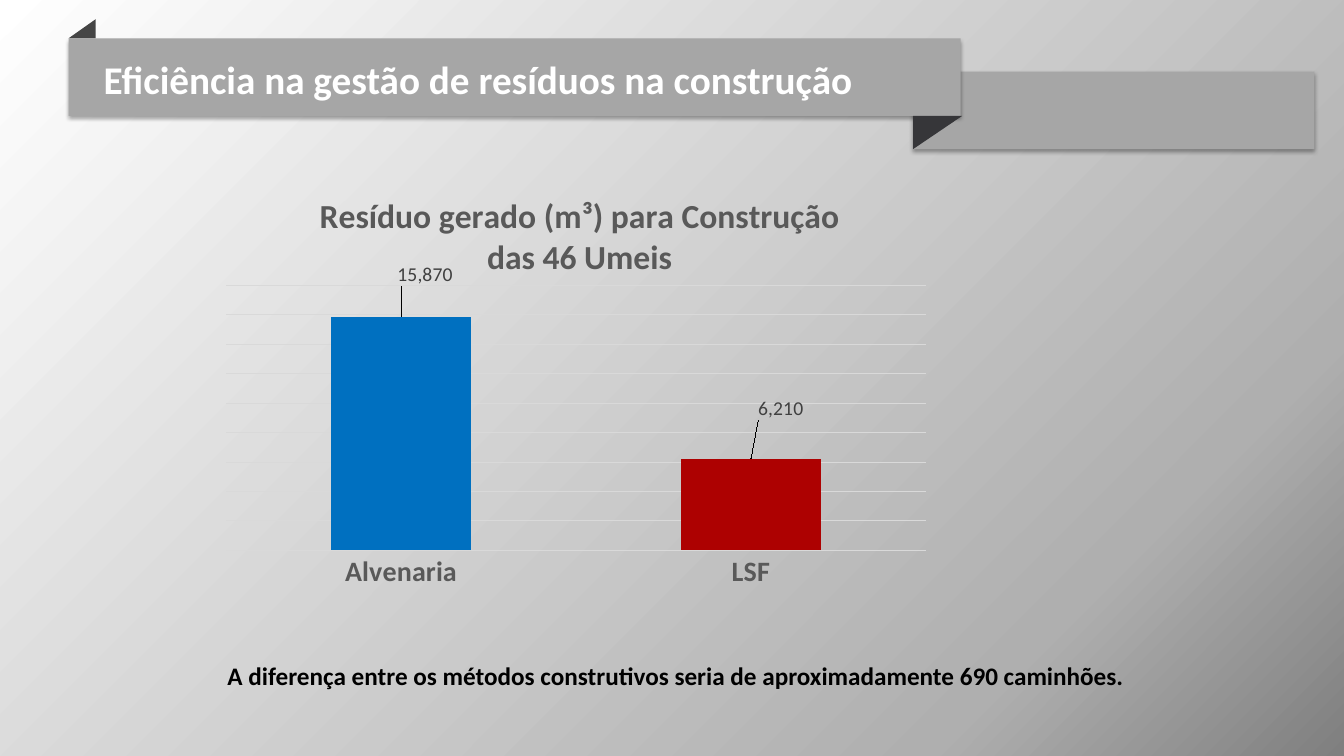
import pptx
import pptx.chart.data
import pptx.dml.color
import pptx.enum.chart
import pptx.enum.shapes
import pptx.enum.text
import pptx.oxml
import pptx.oxml.ns
import pptx.util

Pt = pptx.util.Pt
MSO_SHAPE = pptx.enum.shapes.MSO_SHAPE
ALIGN = pptx.enum.text.PP_ALIGN
ANCHOR = pptx.enum.text.MSO_ANCHOR

COLORS = {
    "white": "FFFFFF", "black": "000000", "ribbon": "A6A6A6",
    "upper fold": "454545", "lower fold": "363639",
    "mid grey": "AFAFAF", "dark grey": "7F7F7F",
    "heading": "595959", "label": "404040", "grid": "D9D9D9",
    "masonry": "0070C0", "steel frame": "AD0101",
}
FONT = "Calibri"


def rgb(name):
    return pptx.dml.color.RGBColor.from_string(COLORS[name])


def element(tag, content="", **attributes):
    """Build one XML element, with its namespace declared."""
    listed = "".join(f' {key}="{value}"' for key, value in attributes.items())
    spaces = pptx.oxml.ns.nsdecls("a", "c")
    return pptx.oxml.parse_xml(f"<{tag} {spaces}{listed}>{content}</{tag}>")


def style_font(font, size, color, bold=False):
    font.name, font.size, font.bold = FONT, Pt(size), bold
    font.color.rgb = rgb(color)


def add_text(slide, text, box, size=18, color="black", align=ALIGN.LEFT,
             anchor=ANCHOR.TOP):
    frame = slide.shapes.add_textbox(*map(Pt, box)).text_frame
    frame.word_wrap = True
    frame.vertical_anchor = anchor
    line = frame.paragraphs[0]
    line.alignment = align
    run = line.add_run()
    run.text = text
    style_font(run.font, size, color, bold=True)


def paint_background(slide):
    fill = slide.background.fill
    fill.gradient()
    fill.gradient_angle = 315
    stop_list = slide.background._cSld.xpath(".//a:gsLst")[0]
    for stop in list(stop_list):
        stop_list.remove(stop)
    for percent, name in ((0, "white"), (80, "mid grey"), (100, "dark grey")):
        color = f'<a:srgbClr val="{COLORS[name]}"/>'
        stop_list.append(element("a:gs", color, pos=percent * 1000))


def add_piece(slide, preset, box, color, flip=None, shadow=False):
    piece = slide.shapes.add_shape(preset, *map(Pt, box))
    piece.fill.solid()
    piece.fill.fore_color.rgb = rgb(color)
    piece.line.fill.background()
    piece.shadow.inherit = False
    if flip:
        piece._element.spPr.find(pptx.oxml.ns.qn("a:xfrm")).set(flip, "1")
    if shadow:
        black = f'<a:srgbClr val="{COLORS["black"]}"><a:alpha val="35000"/></a:srgbClr>'
        piece._element.xpath("./p:spPr/a:effectLst")[0].append(element(
            "a:outerShdw", black, blurRad=Pt(3.1), dist=Pt(1.8),
            dir=90 * 60000, rotWithShape=0))


def add_ribbon(slide, left, top, width, height, heading):
    """Folded title ribbon: tail behind, banner in front, two dark folds."""
    band = 55.4
    tail_left, tail_top = left + 603.3, top + height - band
    banner_top, banner_width = top + 13.7, 637.2
    banner_bottom = banner_top + band
    add_piece(slide, MSO_SHAPE.RECTANGLE,
              (tail_left, tail_top, left + width - tail_left, band),
              "ribbon", shadow=True)
    add_piece(slide, MSO_SHAPE.RIGHT_TRIANGLE,
              (left, top, 19.4, banner_top - top), "upper fold", flip="flipH")
    add_piece(slide, MSO_SHAPE.RECTANGLE,
              (left, banner_top, banner_width, band), "ribbon", shadow=True)
    add_piece(slide, MSO_SHAPE.RIGHT_TRIANGLE,
              (tail_left, banner_bottom, 35, top + height - banner_bottom),
              "lower fold", flip="flipV")
    add_text(slide, heading, (left + 18, banner_top + 10.8, 609, 36),
             size=28, color="white", anchor=ANCHOR.MIDDLE)


def manual_layout(x, y, size=None):
    """Chart layout: an offset, or a fixed inner area when a size is given."""
    parts = []
    if size:
        parts = [("layoutTarget", "inner"), ("xMode", "edge"), ("yMode", "edge")]
    parts += [("x", x), ("y", y)]
    if size:
        parts += zip("wh", size)
    content = "".join(f'<c:{tag} val="{value}"/>' for tag, value in parts)
    return element("c:layout", f"<c:manualLayout>{content}</c:manualLayout>")


def place(owner, layout, index):
    for old in owner.xpath("./c:layout"):
        owner.remove(old)
    owner.insert(index, layout)


def add_waste_chart(slide, left, top, width, height):
    waste = pptx.chart.data.CategoryChartData(number_format="#,##0")
    waste.categories = ["Alvenaria", "LSF"]
    waste.add_series("Series 1", [15870, 6210])
    chart = slide.shapes.add_chart(
        pptx.enum.chart.XL_CHART_TYPE.COLUMN_CLUSTERED,
        Pt(left), Pt(top), Pt(width), Pt(height), waste).chart
    style_font(chart.font, 10, "black")
    chart.has_legend = False

    # Chart title
    chart.has_title = True
    title = chart.chart_title
    title.text_frame.text = "Resíduo gerado (m³) para Construção das 46 Umeis"
    style_font(title.text_frame.paragraphs[0].runs[0].font, 24, "heading", bold=True)
    title_layout = manual_layout(0.14, 0.06)
    for mode in ("yMode", "xMode"):
        title_layout[0].insert(0, element(f"c:{mode}", val="edge"))
    place(title._element, title_layout, 1)
    title.include_in_layout = False
    plot_area = chart.element.xpath(".//c:plotArea")[0]
    place(plot_area, manual_layout(0.02, 0.286, (0.96, 0.606)), 0)

    # Axes
    no_ticks = pptx.enum.chart.XL_TICK_MARK.NONE
    names = chart.category_axis
    names.major_tick_mark = no_ticks
    names.format.line.fill.background()
    style_font(names.tick_labels.font, 20, "heading", bold=True)
    volume = chart.value_axis
    volume.visible = False
    volume.minimum_scale, volume.maximum_scale, volume.major_unit = 0, 18000, 2000
    volume.has_major_gridlines = True
    grid = volume.major_gridlines.format.line
    grid.width = Pt(0.75)
    grid.color.rgb = rgb("grid")

    # Columns and their labels
    plot = chart.plots[0]
    plot.gap_width = 150
    plot.vary_by_categories = False
    columns = plot.series[0]
    labels = columns.data_labels
    labels.show_value = True
    labels.number_format, labels.number_format_is_linked = "#,##0", False
    style_font(labels.font, 14, "label")
    columns.format.fill.solid()
    columns.format.fill.fore_color.rgb = rgb("steel frame")
    masonry = columns.points[0].format.fill
    masonry.solid()
    masonry.fore_color.rgb = rgb("masonry")
    for index, offset in enumerate([(0.033, -0.06), (0.041, -0.078)]):
        label = columns.points[index].data_label
        style_font(label.font, 14, "label")
        label.position = pptx.enum.chart.XL_LABEL_POSITION.OUTSIDE_END
        place(columns._element.xpath("./c:dLbls/c:dLbl")[index],
              manual_layout(*offset), 1)


def main():
    deck = pptx.Presentation()
    deck.slide_width, deck.slide_height = Pt(960), Pt(540)
    slide = deck.slides.add_slide(deck.slide_layouts[6])
    paint_background(slide)
    add_ribbon(slide, 49, 13.7, 889.9, 92.8,
               "Eficiência na gestão de resíduos na construção")
    add_text(slide, "A diferença entre os métodos construtivos seria de "
             "aproximadamente 690 caminhões.", (151.2, 468, 663, 29),
             align=ALIGN.CENTER)
    add_waste_chart(slide, 151.2, 114.5, 520.6, 312.5)
    deck.save("out.pptx")


if __name__ == "__main__":
    main()
